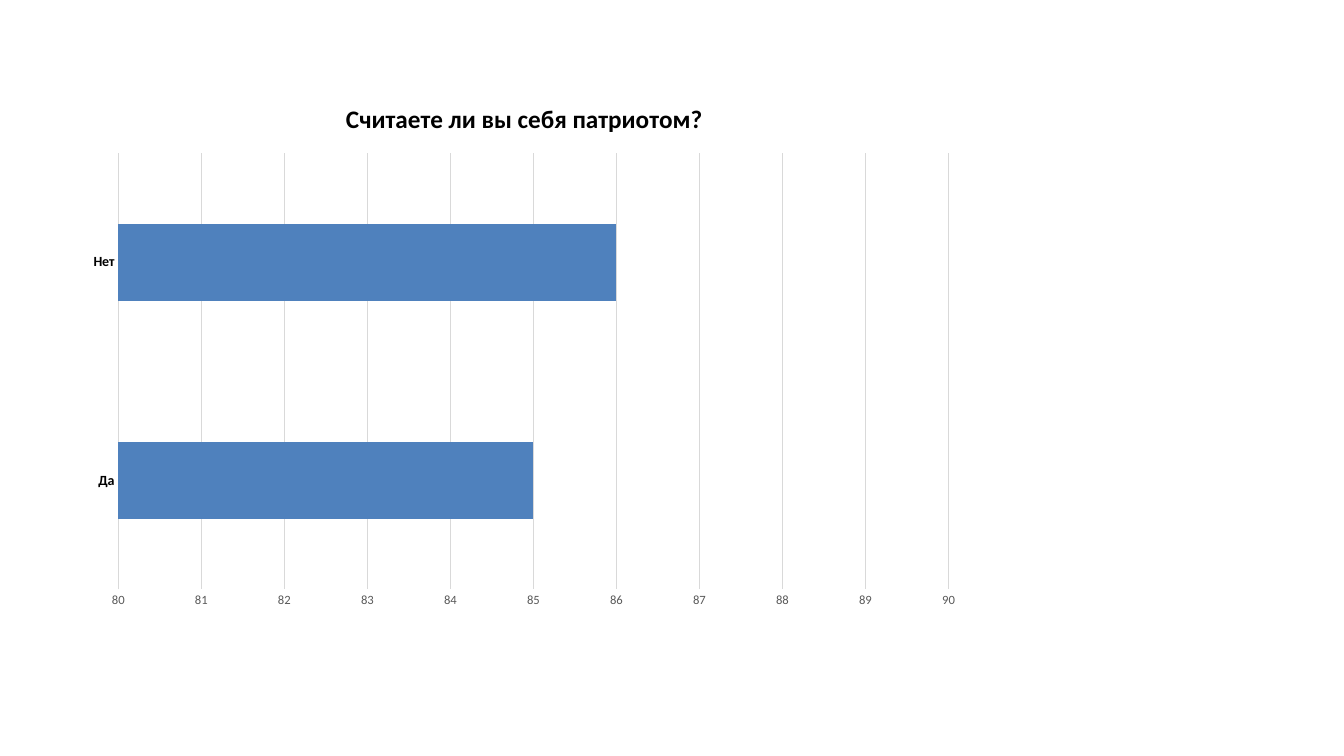
from pptx import Presentation
from pptx.chart.data import CategoryChartData as ChartData
from pptx.dml.color import RGBColor
from pptx.enum.chart import XL_CHART_TYPE as Kind, XL_TICK_MARK as Tick
from pptx.util import Inches, Pt

BLACK = RGBColor(0x00, 0x00, 0x00)
GREY = RGBColor(0x59, 0x59, 0x59)
PALE = RGBColor(0xD9, 0xD9, 0xD9)
BLUE = RGBColor(0x4F, 0x81, 0xBD)
FACE = "Calibri"


def style(font, size, color, bold=False):
    font.name = FACE
    font.size = Pt(size)
    font.color.rgb = color
    font.bold = bold


def rule(line):
    line.color.rgb = PALE
    line.width = Pt(0.75)


def bare(axis):
    axis.major_tick_mark = Tick.NONE
    axis.minor_tick_mark = Tick.NONE


def poll(slide, left, top, width, height):
    data = ChartData()
    data.categories = ["Да", "Нет"]
    data.add_series("Series 1", [85, 86])
    box = [Inches(n) for n in (left, top, width, height)]
    chart = slide.shapes.add_chart(Kind.BAR_CLUSTERED, *box, data).chart
    style(chart.font, 10, BLACK)
    chart.has_legend = False

    chart.has_title = True
    head = chart.chart_title
    head.include_in_layout = False
    run = head.text_frame.paragraphs[0].add_run()
    run.text = "Считаете ли вы себя патриотом?"
    style(run.font, 18, BLACK, True)

    plot = chart.plots[0]
    plot.gap_width = 182
    plot.vary_by_categories = False
    fill = plot.series[0].format.fill
    fill.solid()
    fill.fore_color.rgb = BLUE

    names = chart.category_axis
    bare(names)
    style(names.tick_labels.font, 10, BLACK, True)
    rule(names.format.line)

    scale = chart.value_axis
    bare(scale)
    scale.minimum_scale = 80
    scale.maximum_scale = 90
    scale.major_unit = 1
    style(scale.tick_labels.font, 9, GREY)
    scale.format.line.fill.background()
    scale.has_major_gridlines = True
    rule(scale.major_gridlines.format.line)


def main():
    deck = Presentation()
    deck.slide_width = Inches(13.33)
    deck.slide_height = Inches(7.5)
    slide = deck.slides.add_slide(deck.slide_layouts[6])
    poll(slide, 0.75, 0.8, 8.9, 5.34)
    deck.save("out.pptx")


if __name__ == "__main__":
    main()
